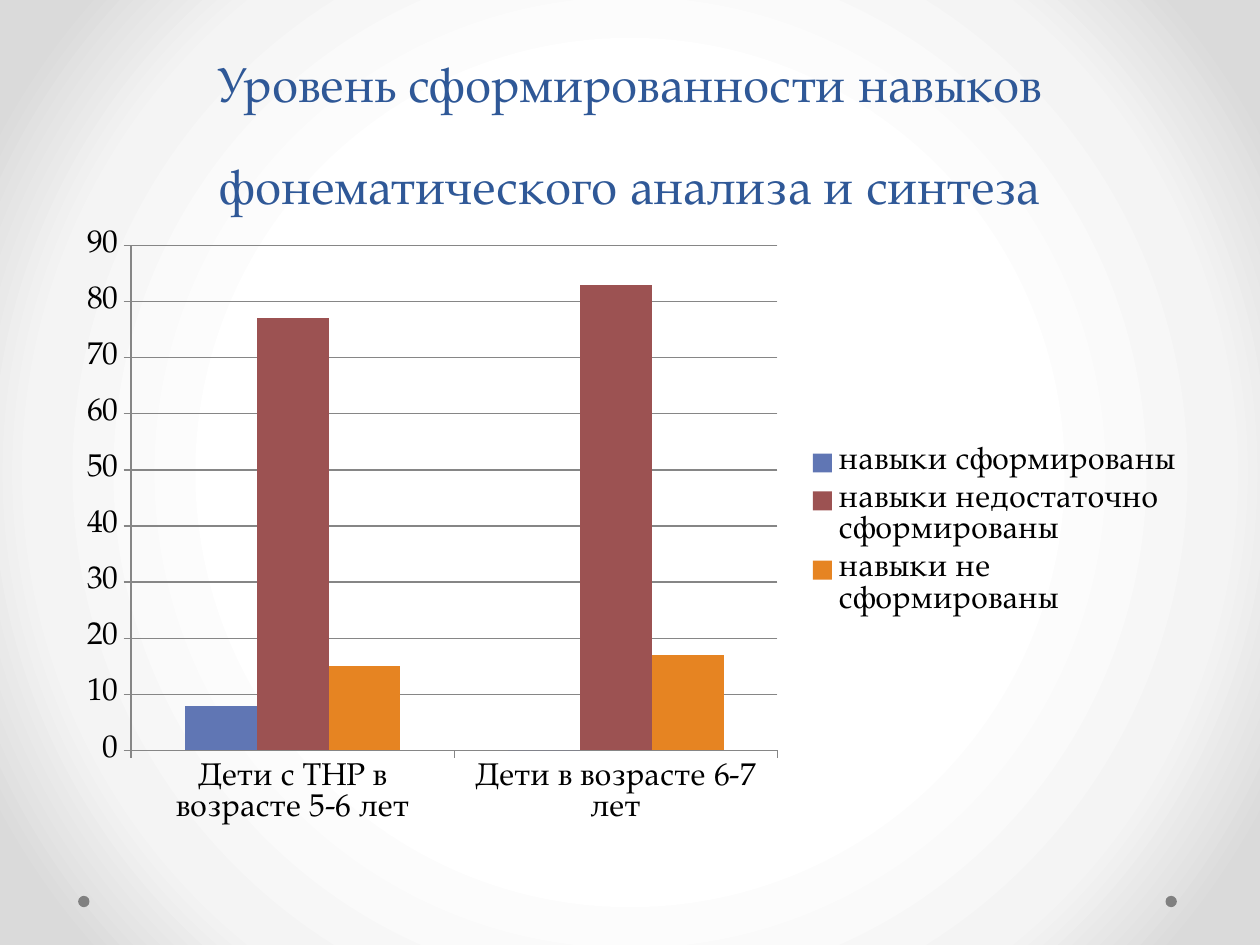
from lxml import etree
from pptx import Presentation
from pptx.chart.data import CategoryChartData as ChartData
from pptx.dml.color import RGBColor
from pptx.enum.chart import XL_CHART_TYPE as Kind, XL_LEGEND_POSITION as Place
from pptx.enum.shapes import MSO_SHAPE as Shape
from pptx.enum.text import MSO_ANCHOR as Anchor, MSO_AUTO_SIZE as Fit, PP_ALIGN as Align
from pptx.oxml import parse_xml
from pptx.oxml.ns import qn
from pptx.util import Inches, Pt

FONT = "TeX Gyre Pagella"
GROUPS = ["Дети с ТНР в возрасте 5-6 лет", "Дети в возрасте 6-7 лет"]
SKILLS = [
    ("навыки сформированы", (8, 0), "6076B4"),
    ("навыки недостаточно сформированы", (77, 83), "9C5252"),
    ("навыки не сформированы", (15, 17), "E68422"),
]
GLOW = [(50, "FFFFFF"), (76, "F4F4F4"), (92, "DADADA")]


def color(code):
    return RGBColor.from_string(code)


def style(font, size, code):
    font.name, font.size, font.bold = FONT, Pt(size), False
    font.color.rgb = color(code)


def paint_back(slide):
    # Radial glow from the centre
    fill = slide.background.fill
    fill.gradient()
    old = slide.background._cSld.find(".//" + qn("a:gradFill"))
    stops = "".join(f'<a:gs pos="{pos * 1000}"><a:srgbClr val="{code}"/></a:gs>'
                    for pos, code in GLOW)
    new = parse_xml(
        '<a:gradFill xmlns:a="http://schemas.openxmlformats.org/drawingml/2006/main"'
        f' rotWithShape="1"><a:gsLst>{stops}</a:gsLst><a:path path="circle">'
        '<a:fillToRect l="50000" t="50000" r="50000" b="50000"/></a:path></a:gradFill>')
    old.getparent().replace(old, new)


def add_dots(slide, x, y, width, size):
    # One dot at each end of the strip
    for left in (x, x + width - size):
        dot = slide.shapes.add_shape(Shape.OVAL, left, y, size, size)
        dot.shadow.inherit = False
        dot.fill.solid()
        dot.fill.fore_color.rgb = color("808080")
        dot.line.fill.background()


def add_title(slide, x, y, width, height):
    title = slide.shapes.title
    title.left, title.top, title.width, title.height = x, y, width, height
    frame = title.text_frame
    frame.word_wrap, frame.auto_size = True, Fit.NONE
    frame.vertical_anchor = Anchor.BOTTOM
    par = frame.paragraphs[0]
    par.alignment, par.line_spacing = Align.CENTER, Pt(58)
    run = par.add_run()
    run.text = "Уровень сформированности навыков фонематического анализа и синтеза"
    style(run.font, 28, "2F5897")


def set_plot(chart, **parts):
    # Fixed inner plot area, as shares of the chart
    area = chart._chartSpace.chart.plotArea
    for old in area.findall(qn("c:layout")):
        area.remove(old)
    layout = etree.Element(qn("c:layout"))
    manual = etree.SubElement(layout, qn("c:manualLayout"))
    rules = {"layoutTarget": "inner", "xMode": "edge", "yMode": "edge", **parts}
    for name, val in rules.items():
        etree.SubElement(manual, qn("c:" + name)).set("val", str(val))
    area.insert(0, layout)


def add_bars(slide, x, y, width, height):
    data = ChartData(number_format="0")
    data.categories = GROUPS
    for name, vals, _ in SKILLS:
        data.add_series(name, vals)
    chart = slide.shapes.add_chart(
        Kind.COLUMN_CLUSTERED, x, y, width, height, data).chart
    style(chart.font, 18, "000000")
    chart.has_title = False

    # Columns
    plot = chart.plots[0]
    plot.gap_width, plot.overlap, plot.vary_by_categories = 150, 0, False
    for bar, (_, _, code) in zip(plot.series, SKILLS):
        bar.format.fill.solid()
        bar.format.fill.fore_color.rgb = color(code)

    # Axes and grid
    scale = chart.value_axis
    scale.minimum_scale, scale.maximum_scale, scale.major_unit = 0, 90, 10
    scale.has_major_gridlines = True
    for part in (scale, chart.category_axis, scale.major_gridlines):
        part.format.line.color.rgb = color("868686")
        part.format.line.width = Pt(0.75)
    set_plot(chart, x=0.06, y=0.04, w=0.57, h=0.81)

    # Legend
    chart.has_legend = True
    chart.legend.position = Place.RIGHT
    chart.legend.include_in_layout = False


def main():
    deck = Presentation()
    deck.slide_width, deck.slide_height = Inches(10), Inches(7.5)
    slide = deck.slides.add_slide(deck.slide_layouts[5])
    paint_back(slide)
    add_dots(slide, Inches(0.62), Inches(7.11), Inches(8.72), Inches(0.09))
    add_title(slide, Inches(0.5), Inches(0), Inches(9), Inches(1.75))
    add_bars(slide, Inches(0.5), Inches(1.75), Inches(9), Inches(4.95))
    deck.save("out.pptx")


if __name__ == "__main__":
    main()
